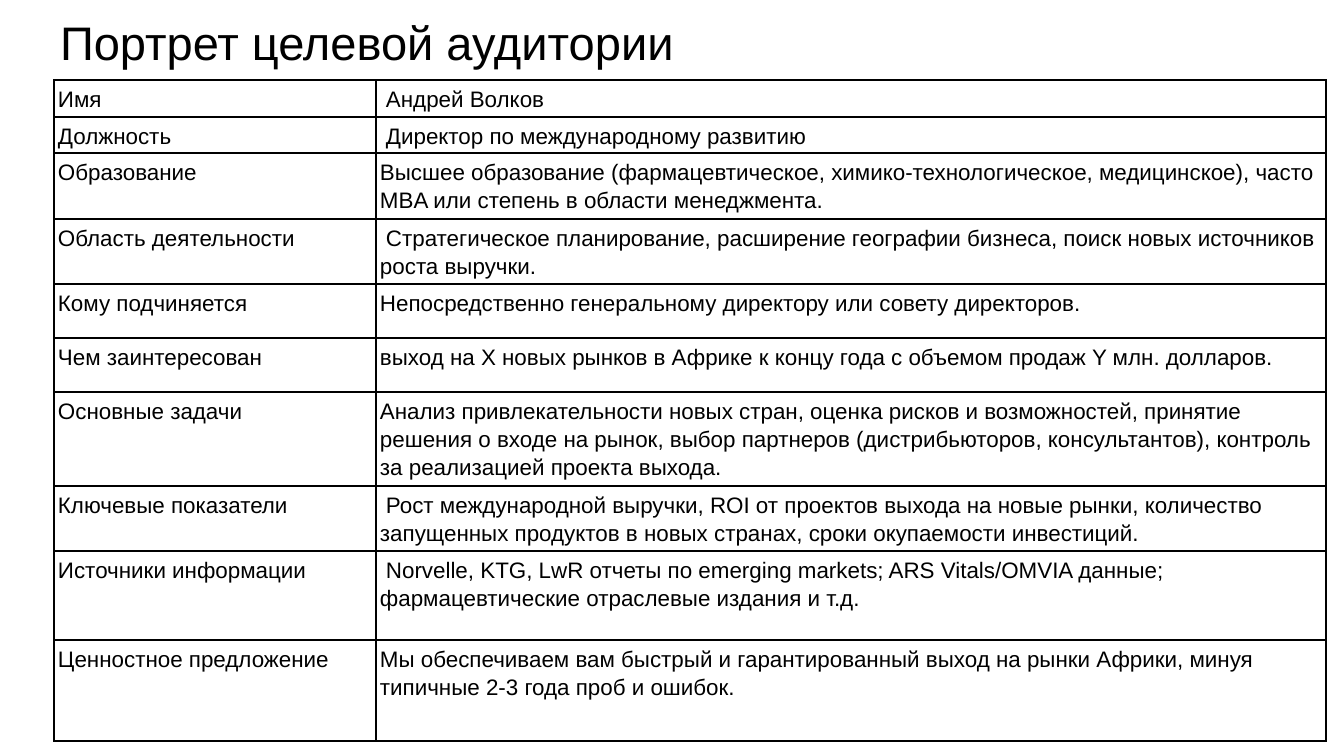
import pptx
import pptx.dml.color
import pptx.enum.text
import pptx.oxml
import pptx.oxml.ns
import pptx.util

PX = 914400 / 134.4
COLORS = {"ink": "000000", "paper": "FFFFFF"}
FONT = "Arial"
COLUMN_WIDTHS = (322, 950)
INDENT = 6

PROFILE = [
    (37, "Имя", "Андрей Волков", INDENT),
    (36, "Должность", "Директор по международному развитию", INDENT),
    (66, "Образование", "Высшее образование (фармацевтическое, химико-технологическое, "
     "медицинское), часто MBA или степень в области менеджмента.", 0),
    (65, "Область деятельности", "Стратегическое планирование, расширение географии бизнеса, "
     "поиск новых источников роста выручки.", INDENT),
    (54, "Кому подчиняется",
     "Непосредственно генеральному директору или совету директоров.", 0),
    (54, "Чем заинтересован", "выход на X новых рынков в Африке к концу года с объемом "
     "продаж Y млн. долларов.", 0),
    (94, "Основные задачи", "Анализ привлекательности новых стран, оценка рисков и "
     "возможностей, принятие решения о входе на рынок, выбор партнеров (дистрибьюторов, "
     "консультантов), контроль за реализацией проекта выхода.", 0),
    (65, "Ключевые показатели", "Рост международной выручки, ROI от проектов выхода на новые "
     "рынки, количество запущенных продуктов в новых странах, сроки окупаемости инвестиций.",
     INDENT),
    (89, "Источники информации", "Norvelle, KTG, LwR отчеты по emerging markets; "
     "ARS Vitals/OMVIA данные; фармацевтические отраслевые издания и т.д.", INDENT),
    (101, "Ценностное предложение", "Мы обеспечиваем вам быстрый и гарантированный выход на "
     "рынки Африки, минуя типичные 2-3 года проб и ошибок.", 0),
]


def px(length):
    """Turn pixels into EMU."""
    return pptx.util.Emu(round(length * PX))


def rgb(name):
    """Look up a named colour."""
    return pptx.dml.color.RGBColor.from_string(COLORS[name])


def style_font(paragraph, size):
    """Set the font of a whole paragraph."""
    paragraph.font.name = FONT
    paragraph.font.size = pptx.util.Pt(size)
    paragraph.font.color.rgb = rgb("ink")


def add_borders(cell):
    """Draw a thin line on all four sides of a cell."""
    properties = cell._tc.get_or_add_tcPr()
    for position, side in enumerate(("lnL", "lnR", "lnT", "lnB")):
        properties.insert(position, pptx.oxml.parse_xml(
            f'<a:{side} {pptx.oxml.ns.nsdecls("a")} w="12700"><a:solidFill>'
            f'<a:srgbClr val="{COLORS["ink"]}"/></a:solidFill></a:{side}>'))


def fill_cell(cell, wording, indent):
    """Write and format one cell of the profile."""
    cell.margin_left = cell.margin_right = cell.margin_top = px(4)
    cell.margin_bottom = 0
    cell.fill.solid()
    cell.fill.fore_color.rgb = rgb("paper")
    cell.text = wording
    paragraph = cell.text_frame.paragraphs[0]
    paragraph.line_spacing = 1.12
    style_font(paragraph, 12)
    if indent:
        paragraph._p.get_or_add_pPr().set("indent", str(px(indent)))
    add_borders(cell)


def add_heading(slide, left, top, width, height):
    """Place the slide heading in its box."""
    heading = slide.shapes.add_textbox(px(left), px(top), px(width), px(height))
    frame = heading.text_frame
    frame.word_wrap = True
    frame.vertical_anchor = pptx.enum.text.MSO_ANCHOR.BOTTOM
    frame.margin_left = frame.margin_right = px(13)
    frame.margin_top = frame.margin_bottom = px(13)
    frame.text = "Портрет целевой аудитории"
    style_font(frame.paragraphs[0], 25.2)


def add_profile(slide, left, top, width, height):
    """Place the audience profile table in its box."""
    profile = slide.shapes.add_table(
        len(PROFILE), len(COLUMN_WIDTHS), px(left), px(top), px(width), px(height)).table
    profile.first_row = profile.horz_banding = False
    for column, column_width in zip(profile.columns, COLUMN_WIDTHS):
        column.width = px(column_width)
    for row, (row_height, label, description, indent) in zip(profile.rows, PROFILE):
        row.height = px(row_height)
        fill_cell(row.cells[0], label, 0)
        fill_cell(row.cells[1], description, indent)


def main():
    """Build and save the slide."""
    deck = pptx.Presentation()
    deck.slide_width, deck.slide_height = px(1344), px(756)
    slide = deck.slides.add_slide(deck.slide_layouts[6])
    add_heading(slide, 47, 0, 1252, 83)
    add_profile(slide, 54, 80, sum(COLUMN_WIDTHS), sum(entry[0] for entry in PROFILE))
    deck.save("out.pptx")


if __name__ == "__main__":
    main()
